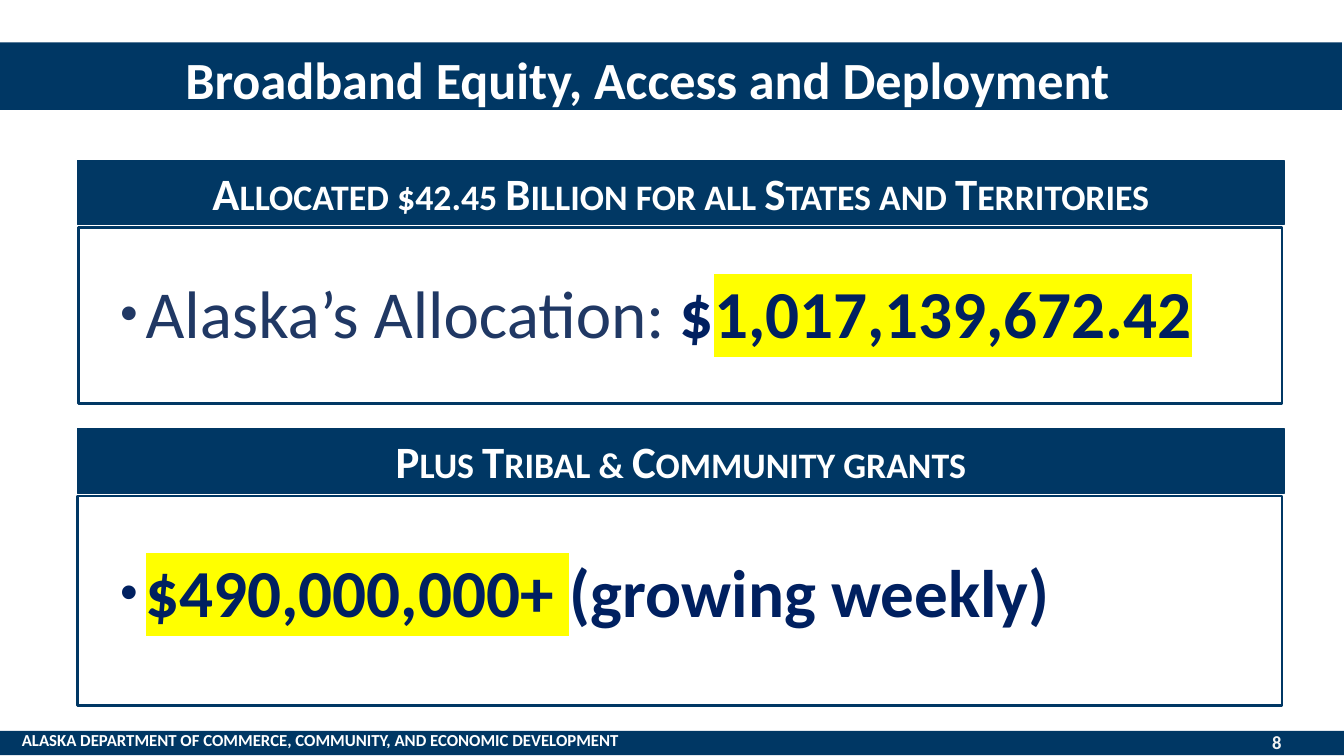
import dataclasses

import lxml.etree
import pptx
import pptx.dml.color
import pptx.enum.shapes
import pptx.enum.text
import pptx.oxml.ns
import pptx.util

Cm = pptx.util.Cm
Pt = pptx.util.Pt
RGB = pptx.dml.color.RGBColor.from_string
qn = pptx.oxml.ns.qn
ALIGN = pptx.enum.text.PP_ALIGN
ANCHOR = pptx.enum.text.MSO_ANCHOR


@dataclasses.dataclass
class Theme:
    font: str = "Calibri"
    navy: str = "003764"
    blue: str = "013864"
    slate: str = "203864"
    ink: str = "002060"
    white: str = "FFFFFF"
    pale: str = "F2F2F2"
    mark: str = "FFFF00"
    title: float = 37.3
    head: float = 32
    body: float = 48
    foot: float = 12
    page: float = 13.3


theme = Theme()
deck = pptx.Presentation()
deck.slide_width, deck.slide_height = Cm(33.87), Cm(19.05)
slide = deck.slides.add_slide(deck.slide_layouts[6])


def block(at, fill=None, line=None, width=1):
    """Add a rectangle; without fill or line colour that part stays empty."""
    shape = slide.shapes.add_shape(
        pptx.enum.shapes.MSO_SHAPE.RECTANGLE, *map(Cm, at))
    shape.shadow.inherit = False
    if fill:
        shape.fill.solid()
        shape.fill.fore_color.rgb = RGB(fill)
    else:
        shape.fill.background()
    if line:
        shape.line.color.rgb = RGB(line)
        shape.line.width = Pt(width)
    else:
        shape.line.fill.background()
    return shape


def write(shape, size, runs, align=ALIGN.LEFT, anchor=ANCHOR.TOP):
    """Fill a shape with runs of (text, colour, bold, highlight)."""
    frame = shape.text_frame
    frame.word_wrap = True
    frame.vertical_anchor = anchor
    para = frame.paragraphs[0]
    para.alignment = align
    for text, color, bold, mark in runs:
        run = para.add_run()
        run.text = text
        font = run.font
        font.name, font.size, font.bold = theme.font, Pt(size), bold
        font.color.rgb = RGB(color)
        if mark:
            light = lxml.etree.Element(qn("a:highlight"))
            lxml.etree.SubElement(light, qn("a:srgbClr")).set("val", mark)
            run._r.rPr.find(qn("a:solidFill")).addnext(light)
    return para


# Title bar and footer
block((0, 18.42, 33.87, 0.61), theme.navy)
block((-0.05, 1.07, 33.87, 1.7), theme.navy)
labels = [
    ((0.3, 18.26, 16.43, 0.76), theme.foot, theme.white, ALIGN.LEFT, ANCHOR.TOP,
     "ALASKA DEPARTMENT OF COMMERCE, COMMUNITY, AND ECONOMIC DEVELOPMENT"),
    ((31.47, 18.21, 1.42, 0.99), theme.page, theme.pale, ALIGN.CENTER,
     ANCHOR.MIDDLE, "8"),
    ((4.42, 1.07, 28.45, 1.7), theme.title, theme.white, ALIGN.LEFT, ANCHOR.TOP,
     "Broadband Equity, Access and Deployment"),
]
for at, size, color, align, anchor, text in labels:
    label = slide.shapes.add_textbox(*map(Cm, at))
    write(label, size, [(text, color, True, None)], align, anchor)

# Two panels: heading band, frame, bulleted amount
panels = [
    (4.04, theme.blue, 0.75, (1.98, 5.74, 30.33, 4.42), 5.77,
     "Allocated $42.45 Billion for all States and Territories",
     [("Alaska’s Allocation: ", theme.slate, False, None),
      ("$", theme.ink, True, None),
      ("1,017,139,672.42", theme.ink, True, theme.mark)]),
    (10.8, theme.navy, 1, (1.96, 12.5, 30.35, 5.28), 12.8,
     "Plus Tribal & Community grants",
     [("$490,000,000+ ", theme.ink, True, theme.mark),
      ("(growing weekly)", theme.ink, True, None)]),
]
for top, color, width, frame, low, head, runs in panels:
    band = block((1.96, top, 30.4, 1.63), color, color, width)
    para = write(band, theme.head, [(head, theme.white, True, None)],
                 ALIGN.CENTER)
    para.runs[0].font._element.set("cap", "small")
    block(frame, None, color, 2)

    body = slide.shapes.add_textbox(Cm(2.06), Cm(low), Cm(30.33), Cm(4.42))
    para = write(body, theme.body, runs, anchor=ANCHOR.MIDDLE)
    para.line_spacing = 0.9
    inner = body.text_frame
    inner.margin_left, inner.margin_right = Cm(0.97), Cm(0.48)
    inner.margin_top = inner.margin_bottom = Cm(0.08)
    props = para._p.get_or_add_pPr()
    props.set("marL", str(Cm(0.64)))
    props.set("indent", str(-Cm(0.64)))
    for tag, key, value in [("a:buSzPct", "val", "75000"),
                            ("a:buFont", "typeface", "Arial"),
                            ("a:buChar", "char", "•")]:
        lxml.etree.SubElement(props, qn(tag)).set(key, value)

deck.save("out.pptx")
